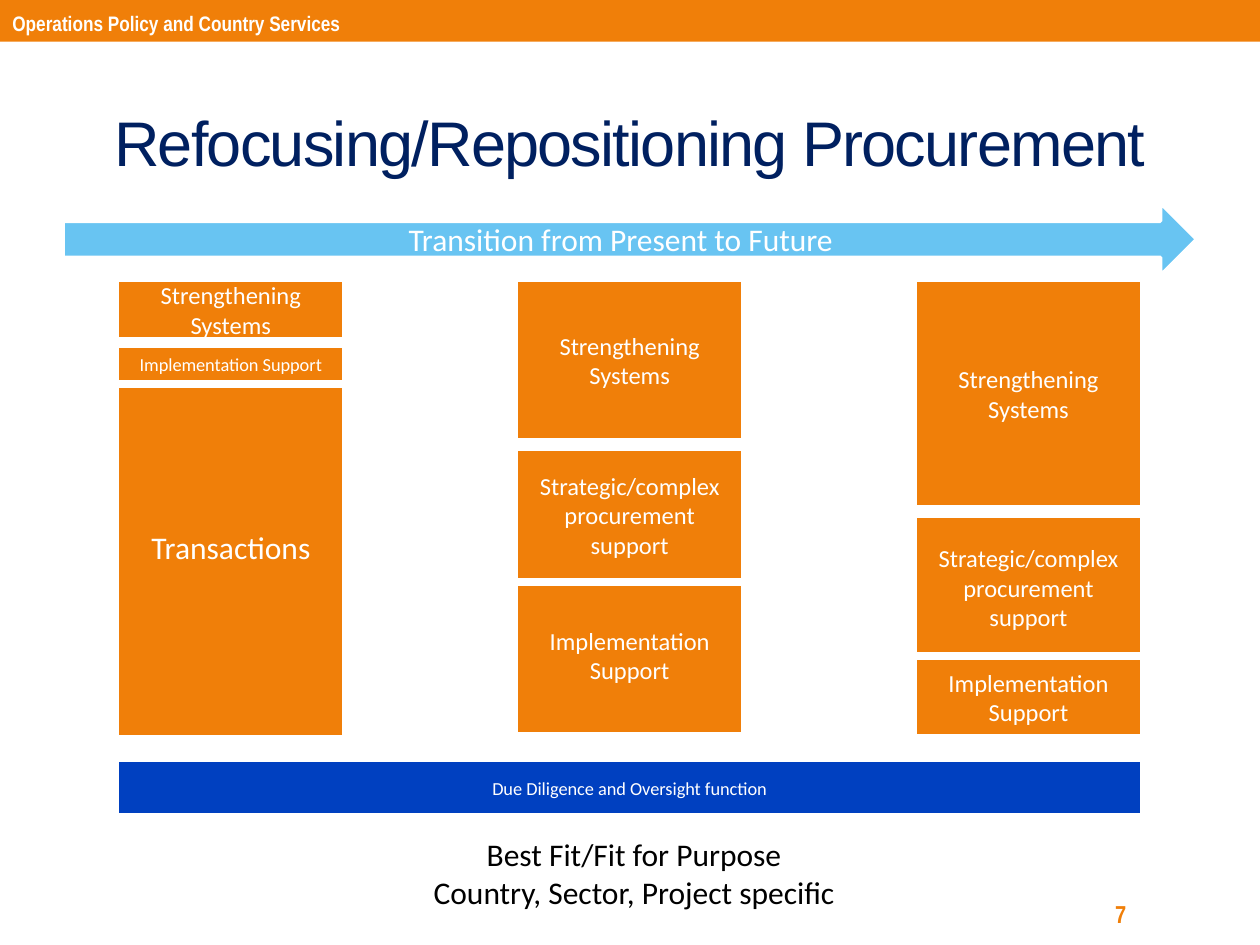
from dataclasses import dataclass
from typing import Any

from pptx import Presentation
from pptx.dml.color import RGBColor
from pptx.enum.shapes import MSO_SHAPE as Shape
from pptx.enum.text import MSO_ANCHOR as Anchor, PP_ALIGN as Align
from pptx.util import Cm, Pt

ORANGE, BLUE, SKY = "F07F09", "0040C0", "68C4F2"
NAVY, WHITE, BLACK = "002060", "FFFFFF", "000000"


def colour(value):
    return RGBColor.from_string(value)


@dataclass
class SlideBuilder:
    page: Any
    font: str = "Calibri"
    border: float = 4.5

    def add_lines(self, item, lines, size, ink, font=None, bold=False,
                  align=Align.CENTER, anchor=Anchor.MIDDLE, spacing=None):
        frame = item.text_frame
        frame.word_wrap = True
        frame.vertical_anchor = anchor
        for index, line in enumerate(lines):
            para = frame.add_paragraph() if index else frame.paragraphs[0]
            para.alignment = align
            span = para.add_run()
            span.text = line
            span.font.name = font or self.font
            span.font.size = Pt(size)
            span.font.bold = bold
            span.font.color.rgb = colour(ink)
            if spacing is not None:
                span._r.get_or_add_rPr().set("spc", str(spacing))

    def text(self, place, lines, size, ink, **style):
        box = self.page.shapes.add_textbox(*map(Cm, place))
        self.add_lines(box, lines, size, ink, **style)
        return box

    def block(self, place, fill, label=None, size=14, kind=Shape.RECTANGLE, border=None):
        box = self.page.shapes.add_shape(kind, *map(Cm, place))
        box.shadow.inherit = False
        box.fill.solid()
        box.fill.fore_color.rgb = colour(fill)
        width = self.border if border is None else border
        if width:
            box.line.color.rgb = colour(WHITE)
            box.line.width = Pt(width)
        else:
            box.line.fill.background()
        if label:
            self.add_lines(box, [label], size, WHITE)
        return box


def main():
    deck = Presentation()
    deck.slide_width, deck.slide_height = Cm(25.4), Cm(19.05)
    slide = SlideBuilder(deck.slides.add_slide(deck.slide_layouts[6]))

    # Header band, title and page number
    slide.block((0, 0, 25.4, 0.84), ORANGE, border=0)
    slide.text((1.27, 1.47, 22.86, 2.74), ["Refocusing/Repositioning Procurement"],
               36, NAVY, font="Arial", spacing=-100)
    slide.text((0, 0.08, 11.43, 0.79), ["Operations Policy and Country Services"],
               12, WHITE, font="Arial Narrow", bold=True, align=Align.LEFT)
    slide.text((22.23, 17.96, 2.97, 0.91), ["7"],
               14, ORANGE, font="Arial Narrow", bold=True, align=Align.LEFT)

    # Stages from present to future: label, top, height, text size
    systems, support = "Strengthening Systems", "Implementation Support"
    strategic, transactions = "Strategic/complex procurement support", "Transactions"
    stages = [
        [(systems, 5.61, 1.27, 14), (support, 6.93, 0.81, 10.5),
         (transactions, 7.75, 7.14, 18)],
        [(systems, 5.61, 3.3, 14), (support, 11.58, 3.25, 14),
         (strategic, 9.02, 2.72, 14)],
        [(systems, 5.61, 4.65, 14), (strategic, 10.36, 2.97, 14),
         (support, 13.23, 1.65, 14)],
    ]
    left, step, width = 2.33, 8.04, 4.65
    for column, stage in enumerate(stages):
        for label, top, height, size in stage:
            box = slide.block((left + column * step, top, width, height), ORANGE, label, size)
            if label == transactions:
                box.text_frame.margin_bottom = Cm(0.73)

    # Shared foundation and closing message
    slide.block((left, 15.29, 2 * step + width, 1.19), BLUE,
                "Due Diligence and Oversight function", 10.5)
    slide.text((1.14, 16.71, 23.29, 1.8),
               ["Best Fit/Fit for Purpose", "Country, Sector, Project specific"],
               18, BLACK, anchor=Anchor.TOP)

    # Transition arrow
    slide.block((1.27, 4.09, 22.86, 1.47), SKY, "Transition from Present to Future", 18,
                kind=Shape.RIGHT_ARROW, border=2.25)

    deck.save("out.pptx")


if __name__ == "__main__":
    main()
